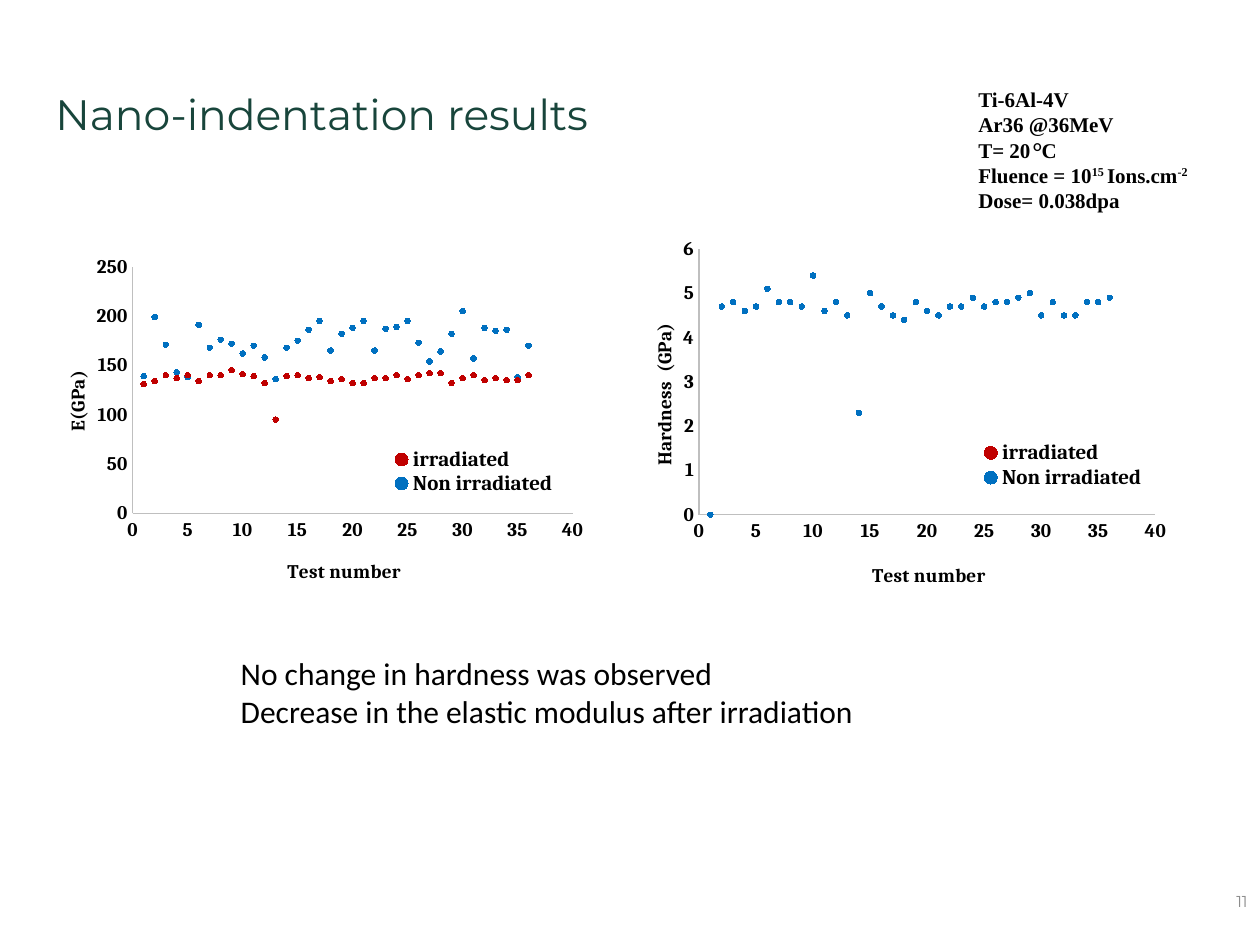
from lxml.etree import SubElement
from pptx import Presentation
from pptx.chart.data import XyChartData
from pptx.dml.color import RGBColor
from pptx.enum.chart import XL_CHART_TYPE, XL_LEGEND_POSITION, XL_MARKER_STYLE, XL_TICK_MARK
from pptx.enum.text import MSO_ANCHOR, PP_ALIGN
from pptx.oxml.ns import qn
from pptx.util import Pt

GREEN = RGBColor(0x18, 0x45, 0x3B)
GREY = RGBColor(0x8C, 0x8C, 0x8C)
AXIS_GREY = RGBColor(0xBF, 0xBF, 0xBF)
BLACK = RGBColor(0, 0, 0)
RED = RGBColor(0xC0, 0, 0)
BLUE = RGBColor(0, 0x70, 0xC0)

TITLE = "Nano-indentation results"
CONCLUSIONS = ["No change in hardness was observed",
               "Decrease in the elastic modulus after irradiation"]
# Each line is a list of (text, style); the styles are named in RUN_STYLES.
CONDITIONS = [
    [("Ti-6Al-4V", "plain")],
    [("Ar36 @36MeV", "plain")],
    [("T= 20", "plain"), (" O", "degree"), ("C", "plain")],
    [("Fluence = 10", "plain"), ("15 ", "super"), ("Ions.cm", "plain"), ("-2", "super")],
    [("Dose= 0.038dpa", "plain")],
]
RUN_STYLES = {"plain": ("Times New Roman", 0), "super": ("Times New Roman", 30000),
              "degree": ("Calibri", 30000)}

MODULUS_IRRADIATED = [
    131, 134, 140, 137, 140, 134, 140, 140, 145, 141, 139, 132, 95, 139, 140, 137, 138, 134,
    136, 132, 132, 137, 137, 140, 136, 140, 142, 142, 132, 137, 140, 135, 137, 135, 135, 140]
MODULUS_PRISTINE = [
    139, 199, 171, 143, 138, 191, 168, 176, 172, 162, 170, 158, 136, 168, 175, 186, 195, 165,
    182, 188, 195, 165, 187, 189, 195, 173, 154, 164, 182, 205, 157, 188, 185, 186, 138, 170]
HARDNESS = [
    4.7, 4.8, 4.6, 4.7, 5.1, 4.8, 4.8, 4.7, 5.4, 4.6, 4.8, 4.5, 2.3, 5, 4.7, 4.5, 4.4, 4.8,
    4.6, 4.5, 4.7, 4.7, 4.9, 4.7, 4.8, 4.8, 4.9, 5, 4.5, 4.8, 4.5, 4.5, 4.8, 4.8, 4.9]

# Series are (name, colour, first test number, values); both hardness series
# coincide from test 2 on. Layouts are fractions of the chart: x, y[, w, h].
CHARTS = [
    {"box": (16.5, 141, 324, 229.5), "axis": "E(GPa)", "maximum": 250, "step": 50,
     "series": [("irradiated", RED, 1, MODULUS_IRRADIATED),
                ("Non irradiated", BLUE, 1, MODULUS_PRISTINE)],
     "plot": (0.183, 0.05, 0.776, 0.614), "legend": (0.64, 0.5, 0.29, 0.12),
     "x_title": (0.45, 0.765), "y_title": (0.056, 0.3)},
    {"box": (351.5, 131, 322, 241), "axis": "Hardness  (GPa)", "maximum": 6, "step": 1,
     "series": [("irradiated", RED, 2, HARDNESS),
                ("Non irradiated", BLUE, 1, [0] + HARDNESS)],
     "plot": (0.149, 0.047, 0.81, 0.63), "legend": (0.65, 0.5, 0.29, 0.12),
     "x_title": (0.45, 0.78), "y_title": (0.057, 0.215)},
]


def set_font(font, name, size, color, bold=False):
    font.name, font.size, font.bold = name, Pt(size), bold
    font.color.rgb = color


def set_layout(element, fractions, inner=False):
    """Pin a chart part at fractions of the chart area."""
    layout = element.find(qn("c:layout"))
    if layout is None:
        layout = element.makeelement(qn("c:layout"))
        overlay = element.find(qn("c:overlay"))
        if overlay is None:
            element.insert(0, layout)
        else:
            overlay.addprevious(layout)
    for child in list(layout):
        layout.remove(child)
    manual = SubElement(layout, qn("c:manualLayout"))
    settings = [("layoutTarget", "inner")] if inner else []
    settings += [("xMode", "edge"), ("yMode", "edge")]
    settings += zip("xywh", fractions)
    for tag, value in settings:
        SubElement(manual, qn("c:" + tag)).set("val", str(value))


def format_axis(axis, title, title_place, maximum, step):
    axis.minimum_scale, axis.maximum_scale, axis.major_unit = 0, maximum, step
    axis.has_major_gridlines = False
    axis.major_tick_mark = axis.minor_tick_mark = XL_TICK_MARK.NONE
    axis.format.line.color.rgb = AXIS_GREY
    axis.format.line.width = Pt(0.75)
    axis.tick_labels.number_format = "General"
    axis.tick_labels.number_format_is_linked = False
    set_font(axis.tick_labels.font, "Cambria", 11, BLACK, True)
    axis.axis_title.text_frame.text = title
    set_font(axis.axis_title.text_frame.paragraphs[0].font, "Cambria", 11, BLACK, True)
    set_layout(axis.axis_title._element, title_place)


def add_scatter(slide, content):
    data = XyChartData()
    for name, _, first, values in content["series"]:
        series = data.add_series(name)
        for test_number, value in enumerate(values, first):
            series.add_data_point(test_number, value)
    chart = slide.shapes.add_chart(
        XL_CHART_TYPE.XY_SCATTER, *map(Pt, content["box"]), data).chart
    chart.has_title = False
    set_font(chart.font, "Cambria", 11, BLACK, True)
    chart.plots[0].vary_by_categories = False
    for series, (_, color, _, _) in zip(chart.plots[0].series, content["series"]):
        series.smooth = False
        series.format.line.fill.background()
        series.marker.style = XL_MARKER_STYLE.CIRCLE
        series.marker.size = 3
        series.marker.format.fill.solid()
        series.marker.format.fill.fore_color.rgb = color
        series.marker.format.line.color.rgb = color
    format_axis(chart.category_axis, "Test number", content["x_title"], 40, 5)
    format_axis(chart.value_axis, content["axis"], content["y_title"],
                content["maximum"], content["step"])
    chart.has_legend = True
    chart.legend.position = XL_LEGEND_POSITION.BOTTOM
    chart.legend.include_in_layout = False
    set_font(chart.legend.font, "Cambria", 12, BLACK, True)
    set_layout(chart.legend._element, content["legend"])
    set_layout(chart._chartSpace.chart.plotArea, content["plot"], inner=True)


def add_text_frame(slide, *box):
    frame = slide.shapes.add_textbox(*map(Pt, box)).text_frame
    frame.word_wrap = True
    return frame


def add_paragraphs(frame, lines):
    """Yield a paragraph of the frame with each line."""
    for index, line in enumerate(lines):
        yield (frame.add_paragraph() if index else frame.paragraphs[0]), line


def main():
    presentation = Presentation()
    presentation.slide_width, presentation.slide_height = Pt(720), Pt(540)
    slide = presentation.slides.add_slide(presentation.slide_layouts[5])

    title = slide.shapes.title
    title.left, title.top, title.width, title.height = map(Pt, (24.5, 46, 648, 38))
    title.text_frame.text = TITLE
    title.text_frame.vertical_anchor = MSO_ANCHOR.MIDDLE
    title.text_frame.paragraphs[0].alignment = PP_ALIGN.LEFT
    set_font(title.text_frame.paragraphs[0].font, "Montserrat", 24.3, GREEN)

    number = add_text_frame(slide, 552, 500.5, 168, 29)
    number.text = "11"
    number.vertical_anchor = MSO_ANCHOR.MIDDLE
    number.paragraphs[0].alignment = PP_ALIGN.RIGHT
    set_font(number.paragraphs[0].font, "Montserrat", 9, GREY)

    for content in CHARTS:
        add_scatter(slide, content)

    conditions = add_text_frame(slide, 552, 46, 174, 80)
    for paragraph, pieces in add_paragraphs(conditions, CONDITIONS):
        for text, style in pieces:
            run = paragraph.add_run()
            run.text = text
            name, baseline = RUN_STYLES[style]
            set_font(run.font, name, 12, BLACK, True)
            if baseline:
                run.font._element.set("baseline", str(baseline))

    conclusions = add_text_frame(slide, 130.5, 370, 526, 51)
    for paragraph, line in add_paragraphs(conclusions, CONCLUSIONS):
        paragraph.text = line
        set_font(paragraph.font, "Calibri", 18, BLACK)

    presentation.save("out.pptx")


if __name__ == "__main__":
    main()
